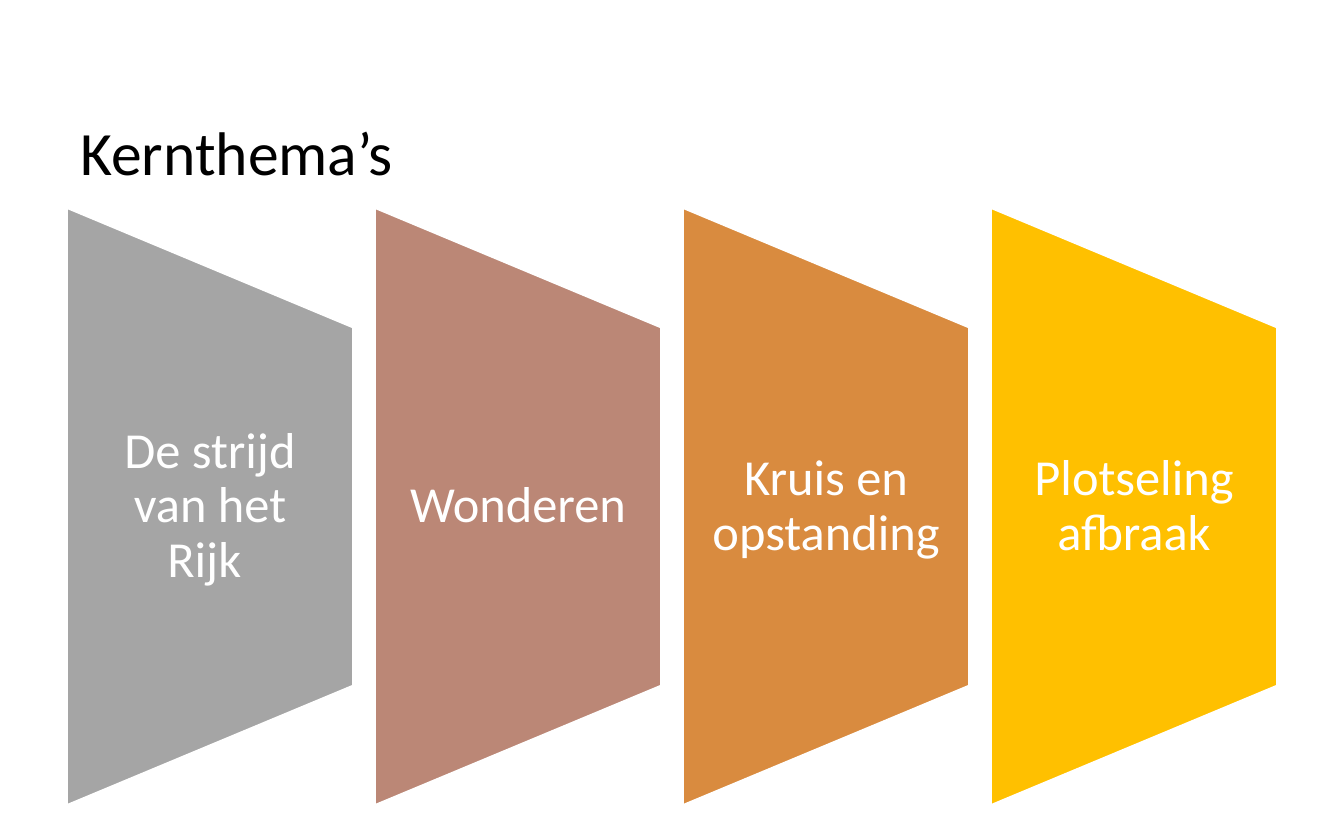
from pptx import Presentation
from pptx.dml.color import RGBColor
from pptx.enum.shapes import MSO_SHAPE
from pptx.enum.text import MSO_ANCHOR, MSO_AUTO_SIZE, PP_ALIGN
from pptx.util import Pt

EMU_PER_PX = 914400 / 134.4
FONT = "Calibri"
BLACK = RGBColor(0x00, 0x00, 0x00)
WHITE = RGBColor(0xFF, 0xFF, 0xFF)
GRAY = RGBColor(0xA5, 0xA5, 0xA5)
ROSE = RGBColor(0xBB, 0x87, 0x76)
ORANGE = RGBColor(0xD9, 0x8B, 0x3F)
GOLD = RGBColor(0xFF, 0xC0, 0x00)

THEMES = [
    ("De strijd van het Rijk ", GRAY),
    ("Wonderen", ROSE),
    ("Kruis en opstanding", ORANGE),
    ("Plotseling afbraak", GOLD),
]


def px(length):
    return round(length * EMU_PER_PX)


def set_text(shape, text, size, color, alignment):
    frame = shape.text_frame
    frame.text = text
    frame.word_wrap = True
    frame.auto_size = MSO_AUTO_SIZE.NONE
    frame.vertical_anchor = MSO_ANCHOR.MIDDLE
    paragraph = frame.paragraphs[0]
    paragraph.alignment = alignment
    paragraph.line_spacing = 0.9
    paragraph.space_before = Pt(0)
    paragraph.font.name = FONT
    paragraph.font.size = Pt(size)
    paragraph.font.color.rgb = color
    return frame


def place_title(slide, left, top, width, height):
    title = slide.shapes.title
    title.left, title.top = px(left), px(top)
    title.width, title.height = px(width), px(height)
    set_text(title, "Kernthema’s", 33, BLACK, PP_ALIGN.LEFT)


def add_panel(shapes, left, top, width, height, text, color):
    turned_left = left + (width - height) / 2
    turned_top = top + (height - width) / 2
    panel = shapes.add_shape(
        MSO_SHAPE.FLOWCHART_MANUAL_OPERATION,
        px(turned_left), px(turned_top), px(height), px(width),
    )
    panel.rotation = 270
    panel.shadow.inherit = False
    panel.fill.solid()
    panel.fill.fore_color.rgb = color
    panel.line.color.rgb = WHITE
    panel.line.width = Pt(1)

    label = shapes.add_textbox(
        px(left), px(top + height / 5), px(width), px(height * 3 / 5)
    )
    frame = set_text(label, text, 27, WHITE, PP_ALIGN.CENTER)
    frame.margin_left = frame.margin_right = px(26)
    frame.margin_top = frame.margin_bottom = 0


def add_theme_panels(slide, left, top, width, height, gap):
    group = slide.shapes.add_group_shape()
    panel_width = (width - gap * (len(THEMES) - 1)) / len(THEMES)
    for index, (text, color) in enumerate(THEMES):
        panel_left = left + index * (panel_width + gap)
        add_panel(group.shapes, panel_left, top, panel_width, height, text, color)


def main():
    presentation = Presentation()
    presentation.slide_width = px(1344)
    presentation.slide_height = px(840)
    slide = presentation.slides.add_slide(presentation.slide_layouts[5])
    place_title(slide, 67, 91, 1210, 130)
    add_theme_panels(slide, 67, 208, 1210, 597, 22)
    presentation.save("out.pptx")


if __name__ == "__main__":
    main()
